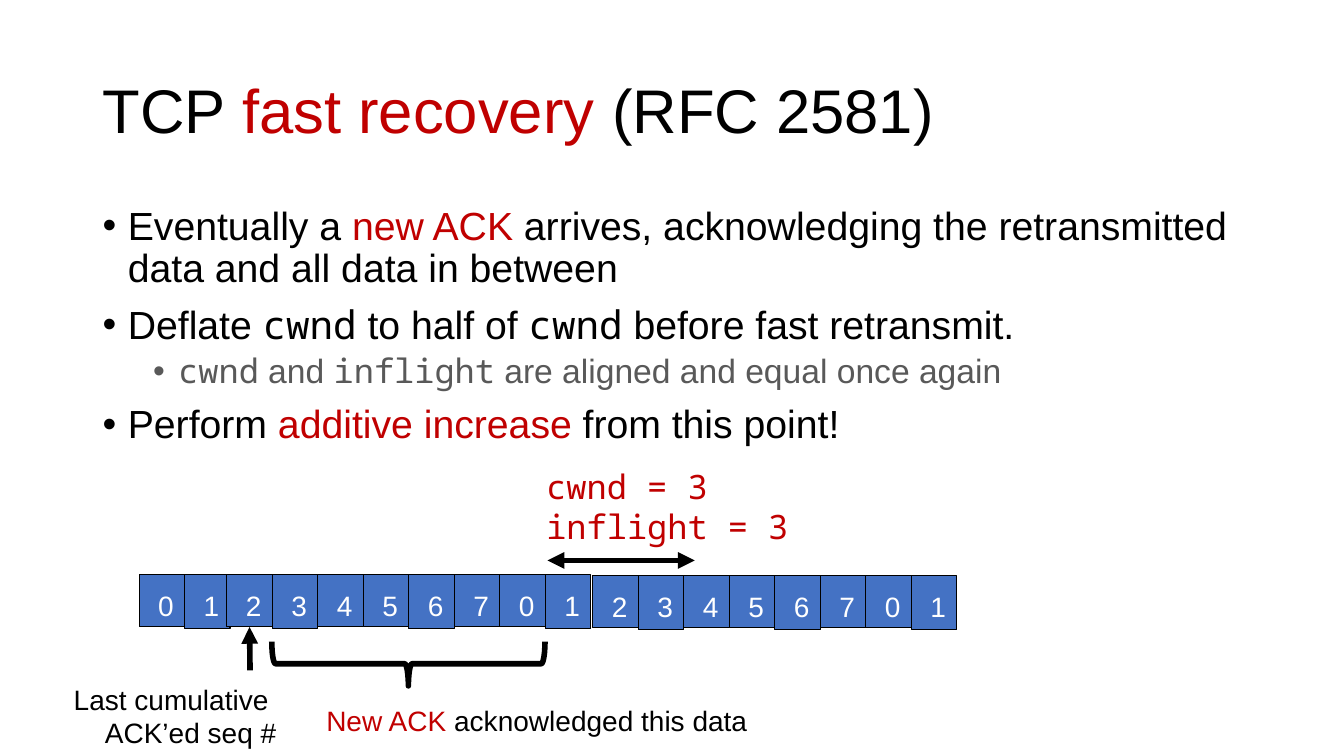
from dataclasses import dataclass

import lxml.etree
import pptx
import pptx.dml.color
import pptx.enum.shapes
import pptx.enum.text
import pptx.oxml.ns
import pptx.util

Inches = pptx.util.Inches
RGBColor = pptx.dml.color.RGBColor
ALIGN = pptx.enum.text.PP_ALIGN
ANCHOR = pptx.enum.text.MSO_ANCHOR
SHAPE = pptx.enum.shapes.MSO_SHAPE


@dataclass(frozen=True)
class Theme:
    black: RGBColor = RGBColor(0, 0, 0)
    red: RGBColor = RGBColor(0xC0, 0, 0)
    gray: RGBColor = RGBColor(0x59, 0x59, 0x59)
    white: RGBColor = RGBColor(0xFF, 0xFF, 0xFF)
    blue: RGBColor = RGBColor(0x44, 0x72, 0xC4)
    sans: str = "Arial"
    mono: str = "Noto Sans Mono"
    title: int = 44
    body: int = 28
    detail: int = 24
    label: int = 20
    thick: float = 4
    thin: float = 0.75


THEME = Theme()


@dataclass(frozen=True)
class Span:
    text: str
    color: RGBColor = THEME.black
    font: str = THEME.sans


@dataclass(frozen=True)
class Para:
    spans: list[Span]
    size: int
    align: ALIGN = ALIGN.LEFT
    line_spacing: float = 1.0
    space_before: int = 0
    indent: float = 0  # left edge of bulleted text, in inches


@dataclass(frozen=True)
class TextBlock:
    left: float
    top: float
    width: float
    height: float
    paras: list[Para]
    anchor: ANCHOR = ANCHOR.TOP


@dataclass(frozen=True)
class CellRun:
    left: float
    top: float
    digits: str


def add_child(parent, tag: str, **attributes: str) -> None:
    lxml.etree.SubElement(parent, pptx.oxml.ns.qn(tag), attributes)


def fill_text(frame, paras: list[Para]) -> None:
    for index, item in enumerate(paras):
        para = frame.paragraphs[0] if index == 0 else frame.add_paragraph()
        para.alignment = item.align
        para.line_spacing = item.line_spacing
        para.space_before = pptx.util.Pt(item.space_before)
        if item.indent:
            properties = para._p.get_or_add_pPr()
            properties.set("marL", str(Inches(item.indent)))
            properties.set("indent", str(Inches(-0.25)))
            add_child(properties, "a:buFont", typeface=THEME.sans)
            add_child(properties, "a:buChar", char="•")
        for span in item.spans:
            run = para.add_run()
            run.text = span.text
            run.font.name = span.font
            run.font.size = pptx.util.Pt(item.size)
            run.font.color.rgb = span.color


def add_text(page, block: TextBlock) -> None:
    box = page.shapes.add_textbox(Inches(block.left), Inches(block.top),
                                  Inches(block.width), Inches(block.height))
    box.text_frame.word_wrap = True
    box.text_frame.vertical_anchor = block.anchor
    fill_text(box.text_frame, block.paras)


def set_line(shape, width: float) -> None:
    shape.line.color.rgb = THEME.black
    shape.line.width = pptx.util.Pt(width)


def add_arrow(page, start: tuple[float, float], end: tuple[float, float],
              ends: list[str]):
    arrow = page.shapes.add_connector(
        pptx.enum.shapes.MSO_CONNECTOR.STRAIGHT,
        *(Inches(value) for value in start + end))
    set_line(arrow, THEME.thick)
    for tag in ends:
        add_child(arrow.line._get_or_add_ln(), tag, type="triangle")
    add_child(arrow._element.spPr, "a:effectLst")
    return arrow


def add_cells(page, run: CellRun) -> list:
    pitch = 3.16 / 7
    cells = []
    for index, digit in enumerate(run.digits):
        height = 0.54 if index % 3 == 1 else 0.52
        cell = page.shapes.add_shape(
            SHAPE.RECTANGLE, Inches(run.left + index * pitch), Inches(run.top),
            Inches(0.45), Inches(height))
        cell.shadow.inherit = False
        cell.fill.solid()
        cell.fill.fore_color.rgb = THEME.blue
        set_line(cell, THEME.thin)
        frame = cell.text_frame
        frame.margin_left = frame.margin_top = Inches(0.08)
        frame.margin_right = frame.margin_bottom = 0
        frame.vertical_anchor = ANCHOR.MIDDLE
        fill_text(frame, [Para([Span(digit, THEME.white)], THEME.label, ALIGN.CENTER)])
        cells.append(cell)
    return cells


def bullet(*spans: Span) -> Para:
    return Para(list(spans), THEME.body, line_spacing=0.9, space_before=10, indent=0.25)


CWND = Span("cwnd", font=THEME.mono)

TITLE = TextBlock(0.92, 0.4, 11.5, 1.45, [
    Para([Span("TCP "), Span("fast recovery", THEME.red), Span(" (RFC 2581)")],
         THEME.title, line_spacing=0.9),
], ANCHOR.MIDDLE)

BODY = TextBlock(0.92, 2, 11.5, 4.76, [
    bullet(Span("Eventually a "), Span("new ACK ", THEME.red),
           Span("arrives, acknowledging the retransmitted data and all data in between")),
    bullet(Span("Deflate "), CWND, Span(" to half of "), CWND,
           Span(" before fast retransmit.")),
    Para([Span("cwnd", THEME.gray, THEME.mono), Span(" and ", THEME.gray),
          Span("inflight", THEME.gray, THEME.mono),
          Span(" are aligned and equal once again", THEME.gray)],
         THEME.detail, line_spacing=0.9, space_before=5, indent=0.75),
    bullet(Span("Perform "), Span("additive increase ", THEME.red),
           Span("from this point!")),
])

WINDOW = TextBlock(5.32, 4.57, 2.69, 0.91, [
    Para([Span(text, THEME.red, THEME.mono)], THEME.detail)
    for text in ("cwnd = 3", "inflight = 3")
])

NEW_ACK = TextBlock(2.91, 6.93, 4.83, 0.44, [
    Para([Span("New ACK ", THEME.red), Span("acknowledged this data")],
         THEME.label, ALIGN.CENTER),
])

LAST_ACK = TextBlock(0.36, 6.72, 2.48, 0.77, [
    Para([Span(text)], THEME.label, ALIGN.RIGHT)
    for text in ("Last cumulative ", "ACK’ed seq #")
])

CELL_RUNS = [
    CellRun(1.38, 5.7, "01"),
    CellRun(2.25, 5.7, "23456701"),
    CellRun(5.88, 5.71, "23456701"),
]


def main() -> None:
    deck = pptx.Presentation()
    deck.slide_width, deck.slide_height = Inches(13.33), Inches(7.5)
    page = deck.slides.add_slide(deck.slide_layouts[6])

    # Title, bullets and labels
    for block in (TITLE, BODY, WINDOW, NEW_ACK, LAST_ACK):
        add_text(page, block)

    # Sequence numbers and the congestion window above them
    rows = [add_cells(page, run) for run in CELL_RUNS]
    add_arrow(page, (5.43, 5.56), (6.89, 5.56), ["a:headEnd", "a:tailEnd"])

    # Newly acknowledged data
    brace = page.shapes.add_shape(SHAPE.RIGHT_BRACE, Inches(3.83), Inches(5.23),
                                  Inches(0.44), Inches(2.71))
    brace.rotation = 90
    brace.shadow.inherit = False
    brace.fill.background()
    set_line(brace, THEME.thick)

    # Pointer to the last cumulative ACK
    pointer = add_arrow(page, (2.48, 6.65), (2.48, 6.22), ["a:tailEnd"])
    pointer.end_connect(rows[1][0], 2)

    deck.save("out.pptx")


if __name__ == "__main__":
    main()
